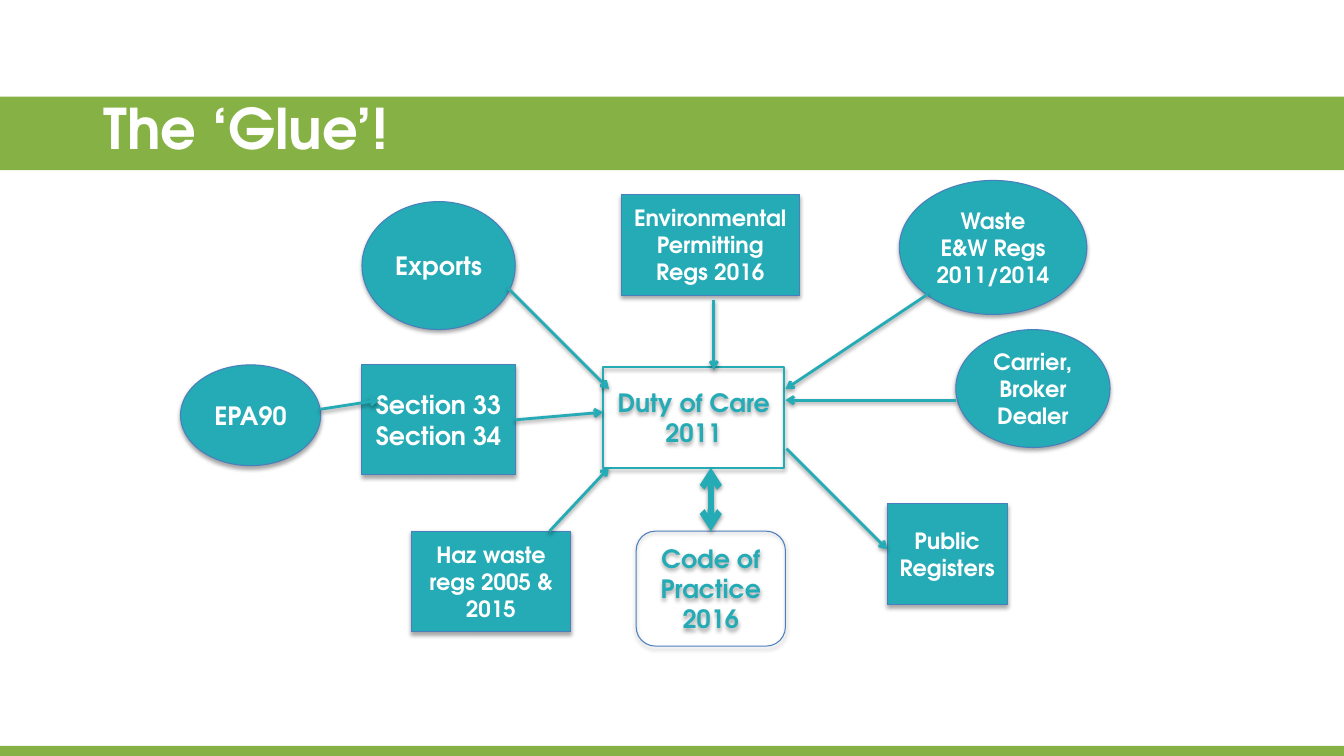
import pptx
import pptx.dml.color
import pptx.enum.shapes
import pptx.enum.text
import pptx.oxml.ns
import pptx.util
from lxml import etree

Inches = pptx.util.Inches
Pt = pptx.util.Pt
qn = pptx.oxml.ns.qn
SHAPE = pptx.enum.shapes.MSO_SHAPE
ALIGN = pptx.enum.text.PP_ALIGN
ANCHOR = pptx.enum.text.MSO_ANCHOR
COLORS = {"green": "86B245", "teal": "24ABB5", "edge": "4B7EBC", "white": "FFFFFF", "black": "000000"}
FONT = "TeX Gyre Adventor"


def rgb(name):
    return pptx.dml.color.RGBColor.from_string(COLORS[name])


class Deck:
    def __init__(self):
        self.prs = pptx.Presentation()
        self.prs.slide_width = Inches(13.33)
        self.prs.slide_height = Inches(7.5)
        self.s = self.prs.slides.add_slide(self.prs.slide_layouts[5])

    def style(self, p, size, color, align):
        p.alignment = align
        p.font.name = FONT
        p.font.size = Pt(size)
        p.font.bold = True
        p.font.color.rgb = rgb(color)

    def shadow(self, effects, alpha, dist):
        shadow = etree.SubElement(effects, qn("a:outerShdw"), blurRad=str(Pt(3.1)), dist=str(Pt(dist)),
                                  dir="5400000", rotWithShape="0")
        color = etree.SubElement(shadow, qn("a:srgbClr"), val=COLORS["black"])
        etree.SubElement(color, qn("a:alpha"), val=str(alpha * 1000))

    def band(self, top, height):
        sp = self.s.shapes.add_shape(SHAPE.RECTANGLE, 0, Inches(top), self.prs.slide_width, Inches(height))
        sp.shadow.inherit = False
        sp.fill.solid()
        sp.fill.fore_color.rgb = rgb("green")
        sp.line.fill.background()

    def title(self, text, left, top, width, height):
        sp = self.s.shapes.title
        sp.left, sp.top, sp.width, sp.height = map(Inches, (left, top, width, height))
        self.s.shapes.element.append(sp.element)
        tf = sp.text_frame
        tf.text = text
        tf.word_wrap = False
        tf.vertical_anchor = ANCHOR.TOP
        self.style(tf.paragraphs[0], 40, "white", ALIGN.LEFT)

    def node(self, text, kind, left, top, width, height, size=16, filled=True, edge="edge", weight=0.75):
        sp = self.s.shapes.add_shape(kind, *map(Inches, (left, top, width, height)))
        if filled:
            sp.fill.solid()
            sp.fill.fore_color.rgb = rgb("teal")
        else:
            sp.fill.background()
        sp.line.color.rgb = rgb(edge)
        sp.line.width = Pt(weight)
        sp.shadow.inherit = False
        self.shadow(sp.element.spPr.find(qn("a:effectLst")), 35, 1.8)
        tf = sp.text_frame
        tf.text = text
        tf.word_wrap = True
        tf.margin_left = tf.margin_right = Inches(0.08)
        tf.vertical_anchor = ANCHOR.MIDDLE
        self.style(tf.paragraphs[0], size, "teal" if not filled else "white", ALIGN.CENTER)
        return sp

    def arrow(self, x1, y1, x2, y2, weight=2, ends=("tailEnd",)):
        line = self.s.shapes.add_connector(pptx.enum.shapes.MSO_CONNECTOR.STRAIGHT,
                                           *map(Inches, (x1, y1, x2, y2)))
        line.line.color.rgb = rgb("teal")
        line.line.width = Pt(weight)
        spPr = line.element.spPr
        for end in ends:
            etree.SubElement(spPr.find(qn("a:ln")), qn(f"a:{end}"), type="arrow")
        self.shadow(etree.SubElement(spPr, qn("a:effectLst")), 38, 1.6)
        return line


def main():
    deck = Deck()
    deck.band(7.4, 0.1)
    deck.band(0.96, 0.73)
    deck.title("The ‘Glue’!", 0.93, 0.88, 3.07, 0.77)

    deck.node("EPA90", SHAPE.OVAL, 1.79, 3.62, 1.39, 1, 18)
    sections = deck.node("Section 33 Section 34", SHAPE.RECTANGLE, 3.59, 3.62, 1.52, 1.09, 18)
    deck.node("Duty of Care 2011", SHAPE.RECTANGLE, 5.98, 3.64, 1.8, 1, 18, False, "teal", 1.5)
    deck.node("Waste E&W Regs 2011/2014", SHAPE.OVAL, 8.92, 1.79, 1.86, 1.33)
    deck.node("Carrier, Broker Dealer", SHAPE.OVAL, 9.48, 3.27, 1.53, 1.17)
    deck.node("Environmental Permitting Regs 2016", SHAPE.RECTANGLE, 6.16, 1.93, 1.77, 1)
    deck.node("Haz waste regs 2005 & 2015", SHAPE.RECTANGLE, 4.08, 5.27, 1.58, 1)
    code = deck.node("Code of Practice 2016", SHAPE.ROUNDED_RECTANGLE, 6.31, 5.27, 1.48, 1.14, 18, False)
    deck.node("Public Registers", SHAPE.RECTANGLE, 8.8, 5, 1.19, 1)
    deck.node("Exports", SHAPE.OVAL, 3.59, 2, 1.52, 1.27, 18)

    for ends in (
        (9.2, 2.92, 7.79, 3.86),
        (9.48, 3.97, 7.79, 3.97),
        (5.45, 5.27, 6.04, 4.64),
        (7.8, 4.45, 8.8, 5.45),
        (7.08, 2.98, 7.08, 3.67),
        (5.04, 2.86, 6.04, 3.86),
        (3.18, 4.06, 3.76, 3.97),
    ):
        deck.arrow(*ends)
    deck.arrow(7.05, 4.64, 7.05, 5.27, 4.5, ("headEnd", "tailEnd")).end_connect(code, 0)
    deck.arrow(5.11, 4.17, 5.98, 4.09).begin_connect(sections, 3)

    deck.prs.save("out.pptx")


if __name__ == "__main__":
    main()
